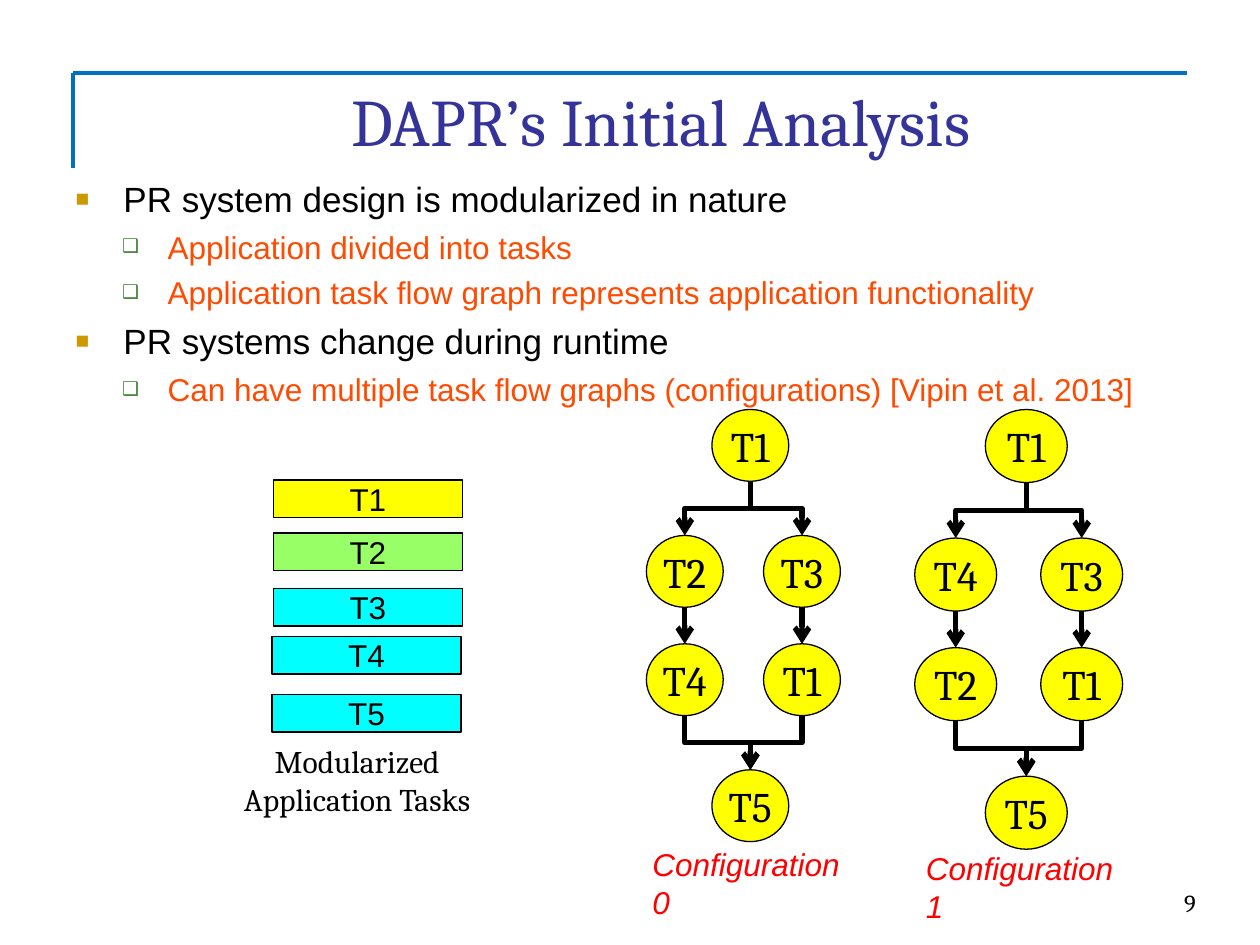
from dataclasses import dataclass

from lxml import etree
from pptx import Presentation
from pptx.dml.color import RGBColor
from pptx.enum import shapes as es, text as et
from pptx.oxml import ns
from pptx.util import Inches, Pt

CENTER = et.PP_ALIGN.CENTER
MIDDLE = et.MSO_ANCHOR.MIDDLE


@dataclass
class Graph:
    """A task flow graph: one node, two chains of two, one node."""
    size: tuple[float, float]
    cols: tuple[float, float, float]  # left, middle, right
    rows: tuple[float, ...]
    names: tuple[str, ...]
    label: str
    box: tuple[float, ...]


@dataclass
class Task:
    name: str
    left: float
    top: float
    fill: str


@dataclass
class Level:
    depth: int
    indent: float
    hang: float
    before: float
    mark: str
    tint: str
    scale: int
    size: int
    color: str


GRAPHS = (
    Graph((0.61, 0.57), (5.13, 5.65, 6.06), (3.25, 4.25, 5.11, 6.11),
          ("T1", "T2", "T3", "T4", "T1", "T5"),
          "Configuration 0", (5.08, 6.66, 1.75, 0.39)),
    Graph((0.65, 0.58), (7.26, 7.82, 8.26), (3.25, 4.27, 5.14, 6.16),
          ("T1", "T4", "T3", "T2", "T1", "T5"),
          "Configuration 1", (7.25, 6.69, 1.86, 0.39)),
)
# Column and row of each node, then the node pairs that are joined
SPOTS = ((1, 0), (0, 1), (2, 1), (0, 2), (2, 2), (1, 3))
EDGES = ((0, 1), (0, 2), (1, 3), (2, 4), (4, 5), (3, 5))

TASKS = (
    Task("T1", 2.17, 3.81, "FFFF00"),
    Task("T2", 2.17, 4.23, "99FF66"),
    Task("T3", 2.17, 4.67, "00FFFF"),
    Task("T4", 2.16, 5.05, "00FFFF"),
    Task("T5", 2.16, 5.51, "00FFFF"),
)

MAIN = Level(0, 0.38, 0.38, 5, "■", "CC9900", 65, 20, "000000")
SUB = Level(1, 0.73, 0.36, 4.5, "❑", "3B812F", 60, 18, "FF4A00")
POINTS = (
    (MAIN, "PR system design is modularized in nature"),
    (SUB, "Application divided into tasks"),
    (SUB, "Application task flow graph represents application functionality"),
    (MAIN, "PR systems change during runtime"),
    (SUB, "Can have multiple task flow graphs (configurations) [Vipin et al. 2013]"),
)


def rgb(code: str) -> RGBColor:
    return RGBColor.from_string(code)


def place(shape, box) -> None:
    for key, val in zip(("left", "top", "width", "height"), box):
        setattr(shape, key, Inches(val))


def style(run, name: str, size: float, color: str = "000000", **more) -> None:
    for key, val in {"name": name, "size": Pt(size), **more}.items():
        setattr(run.font, key, val)
    run.font.color.rgb = rgb(color)


def write(shape, words: str, name: str, size: float, color: str = "000000",
          align=None, anchor=et.MSO_ANCHOR.TOP, wrap: bool = True, **more) -> None:
    frame = shape.text_frame
    form = {"word_wrap": wrap, "auto_size": et.MSO_AUTO_SIZE.NONE,
            "vertical_anchor": anchor}
    for key, val in form.items():
        setattr(frame, key, val)
    para = frame.paragraphs[0]
    para.alignment = align
    run = para.add_run()
    run.text = words
    style(run, name, size, color, **more)


def label(slide, box, words: str, *args, **more) -> None:
    write(slide.shapes.add_textbox(*map(Inches, box)), words, *args, **more)


def block(slide, kind, box, fill: str, words: str, name: str, size: float) -> None:
    shape = slide.shapes.add_shape(kind, *map(Inches, box))
    shape.shadow.inherit = False
    shape.fill.solid()
    shape.fill.fore_color.rgb = rgb(fill)
    shape.line.color.rgb = rgb("000000")
    shape.line.width = Pt(0.75)
    write(shape, words, name, size, align=CENTER, anchor=MIDDLE, wrap=False)


def link(slide, kind, ends, color: str, width: float):
    line = slide.shapes.add_connector(kind, *map(Inches, ends))
    line.line.color.rgb = rgb(color)
    line.line.width = Pt(width)
    etree.SubElement(line._element.spPr, ns.qn("a:effectLst"))
    return line


def arrow(slide, start, end) -> None:
    """Join two points downwards, with a level bend when they are not aligned."""
    (x1, y1), (x2, y2) = start, end
    ends, kind = (x1, y1, x2, y2), es.MSO_CONNECTOR.STRAIGHT
    bent = x1 != x2
    if bent:
        # The preset runs sideways, so lay it out flat and turn it
        kind = es.MSO_CONNECTOR.ELBOW
        cx, cy = (x1 + x2) / 2, (y1 + y2) / 2
        dx, dy = abs(x2 - x1) / 2, (y2 - y1) / 2
        ends = (cx - dy, cy - dx, cx + dy, cy + dx)
    line = link(slide, kind, ends, "000000", 3)
    if bent:
        turn = {"rot": "5400000"} if x2 < x1 else {"rot": "16200000", "flipH": "1"}
        for key, val in turn.items():
            line._element.spPr.find(ns.qn("a:xfrm")).set(key, val)
    etree.SubElement(line.line._get_or_add_ln(), ns.qn("a:tailEnd"), type="arrow")


def draw(slide, graph: Graph) -> None:
    wide, high = graph.size
    nodes = [(graph.cols[col], graph.rows[row]) for col, row in SPOTS]
    for (x, y), name in zip(nodes, graph.names):
        block(slide, es.MSO_SHAPE.OVAL, (x, y, wide, high), "FFFF00",
              name, "Cambria", 24)
    for a, b in EDGES:
        (x1, y1), (x2, y2) = nodes[a], nodes[b]
        arrow(slide, (x1 + wide / 2, y1 + high), (x2 + wide / 2, y2))
    label(slide, graph.box, graph.label, "Arial", 18, "FF0000", italic=True)


def bullet(para, level: Level) -> None:
    prop = para._p.get_or_add_pPr()
    prop.set("marL", str(Inches(level.indent)))
    prop.set("indent", str(-Inches(level.hang)))
    tint = etree.SubElement(prop, ns.qn("a:buClr"))
    etree.SubElement(tint, ns.qn("a:srgbClr"), val=level.tint)
    etree.SubElement(prop, ns.qn("a:buSzPct"), val=str(level.scale * 1000))
    etree.SubElement(prop, ns.qn("a:buFont"), typeface="Arial")
    etree.SubElement(prop, ns.qn("a:buChar"), char=level.mark)


def fill_list(body) -> None:
    place(body, (0.5, 1.33, 9.75, 1.08))
    frame = body.text_frame
    form = {"word_wrap": True, "auto_size": et.MSO_AUTO_SIZE.NONE,
            "vertical_anchor": et.MSO_ANCHOR.TOP, "margin_top": Inches(0.08)}
    for key, val in form.items():
        setattr(frame, key, val)
    for i, (level, words) in enumerate(POINTS):
        para = frame.add_paragraph() if i else frame.paragraphs[0]
        para.level = level.depth
        para.space_before = Pt(level.before if i else 0)
        bullet(para, level)
        run = para.add_run()
        run.text = words
        style(run, "Arial", level.size, level.color)


def main() -> None:
    deck = Presentation()
    deck.slide_width, deck.slide_height = Inches(10), Inches(7.5)
    slide = deck.slides.add_slide(deck.slide_layouts[1])
    for end in ((9.42, 0.58), (0.58, 1.33)):
        link(slide, es.MSO_CONNECTOR.STRAIGHT, (0.58, 0.58, *end), "0070C0", 2.25)
    title = slide.shapes.title
    place(title, (0.58, 0.58, 9.33, 0.75))
    write(title, "DAPR’s Initial Analysis", "Cambria", 38, "333399",
          align=CENTER, anchor=MIDDLE)
    fill_list(slide.placeholders[1])
    for graph in GRAPHS:
        draw(slide, graph)
    for task in TASKS:
        block(slide, es.MSO_SHAPE.RECTANGLE, (task.left, task.top, 1.5, 0.3),
              task.fill, task.name, "Arial", 18)
    label(slide, (1.67, 5.84, 2.33, 0.71), "Modularized Application Tasks",
          "Cambria", 18, align=CENTER)
    label(slide, (7.56, 7, 2.03, 0.5), "9", "Cambria", 14,
          align=et.PP_ALIGN.RIGHT)
    deck.save("out.pptx")


if __name__ == "__main__":
    main()
